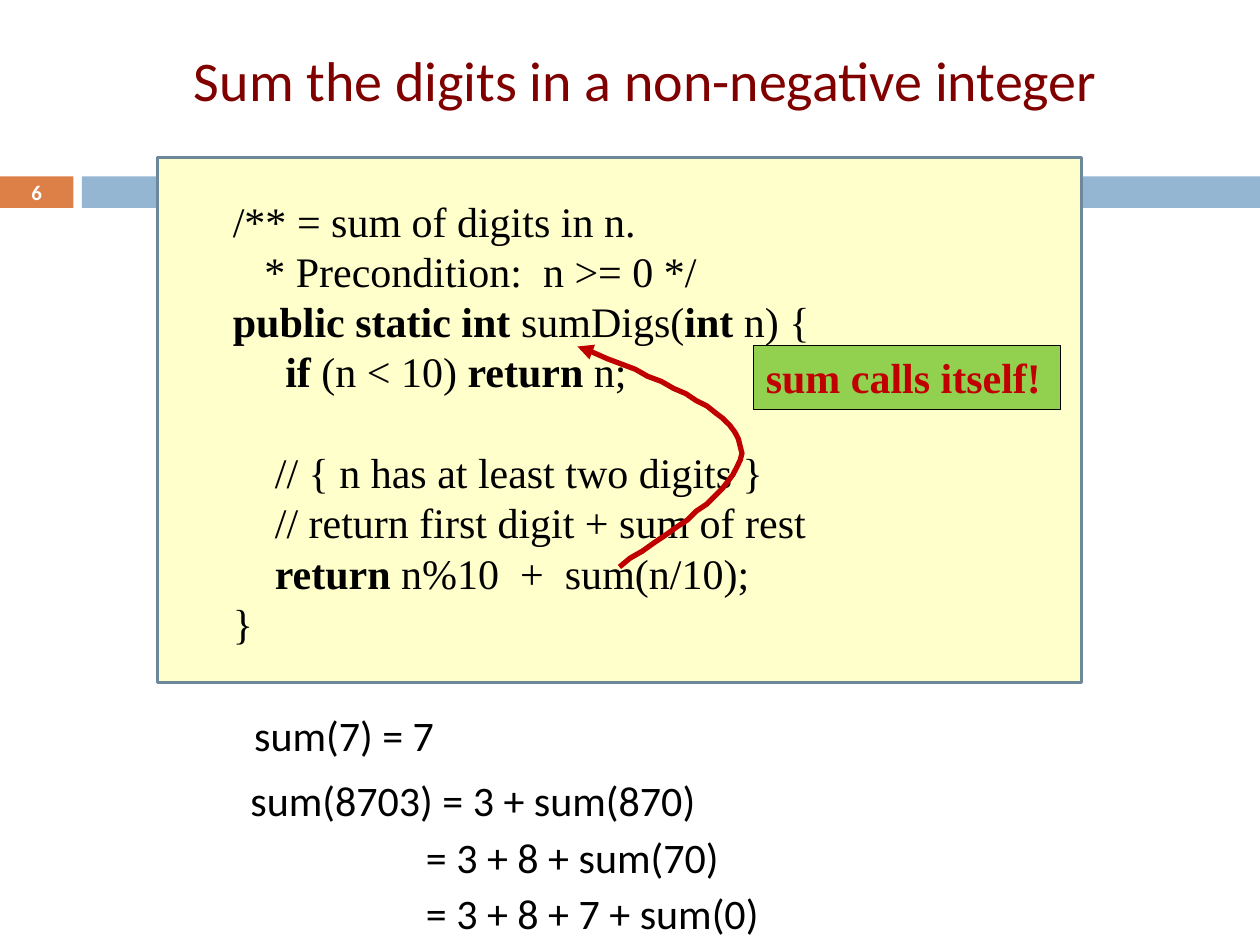
from lxml import etree
from pptx import Presentation
from pptx.dml.color import RGBColor
from pptx.enum.shapes import MSO_SHAPE
from pptx.enum.text import MSO_ANCHOR, MSO_AUTO_SIZE, PP_ALIGN
from pptx.oxml.ns import qn
from pptx.util import Pt

RECT = MSO_SHAPE.RECTANGLE
TOP, MIDDLE = MSO_ANCHOR.TOP, MSO_ANCHOR.MIDDLE
LEFT, CENTER = PP_ALIGN.LEFT, PP_ALIGN.CENTER
NO_FIT = MSO_AUTO_SIZE.NONE

COLORS = {
    "orange": "DD8047", "blue": "94B6D2", "cream": "FFFFCC", "slate": "6D879B",
    "maroon": "800000", "red": "C00000", "green": "92D050",
    "black": "000000", "white": "FFFFFF",
}
SANS, SERIF = "Calibri", "Times New Roman"
CODE_SPACE = 6      # width of one space in the 24 pt serif
CODE_LEADING = 28.75

# (indent in spaces, blank lines before, text); |bars| enclose bold words
CODE = [
    (3, 0, "/** = sum of digits in n."),
    (6, 0, "* Precondition:  n >= 0 */"),
    (3, 0, "|public static int |sumDigs(|int |n) {"),
    (8, 0, "|if| (n < 10) |return| n;"),
    (7, 1, "// { n has at least two digits }"),
    (7, 0, "// return first digit + sum of rest"),
    (7, 0, "|return| n%10  +  sum(n/10);"),
    (3, 0, "}"),
]
# (left, top, indent, text)
STEPS = [
    (64, 439, 72, "sum(8703) = 3 + sum(870)"),
    (64.8, 471.6, 171.5, "= 3 + 8 + sum(70)"),
    (64.8, 503.5, 171.5, "= 3 + 8 + 7 + sum(0)"),
]


def rgb(name):
    return RGBColor.from_string(COLORS[name])


def write(p, text, font=SANS, size=24, color="black", bold=False,
          align=LEFT, indent=0, before=0, leading=None):
    """Fill a paragraph; words between bars switch the bold setting."""
    p.alignment = align
    p.space_before = Pt(before)
    if leading:
        p.line_spacing = Pt(leading)
    pPr = p._p.get_or_add_pPr()
    pPr.set("marL", str(Pt(indent)))
    pPr.set("indent", "0")
    etree.SubElement(pPr, qn("a:buNone"))
    for i, part in enumerate(text.split("|")):
        if part:
            r = p.add_run()
            r.text = part
            r.font.name, r.font.size = font, Pt(size)
            r.font.bold = bold != (i % 2 == 1)
            r.font.color.rgb = rgb(color)


def bezier(start, c1, c2, end, steps=16):
    """Points on a cubic curve, without its start."""
    for i in range(1, steps + 1):
        t = i / steps
        u = 1 - t
        yield tuple(u**3 * a + 3 * u * u * t * b + 3 * u * t * t * c + t**3 * d
                    for a, b, c, d in zip(start, c1, c2, end))


class SlideBuilder:
    def __init__(self, prs):
        self.slide = prs.slides.add_slide(prs.slide_layouts[1])
        self.shapes = self.slide.shapes

    def frame(self, sp, anchor=TOP, wrap=True):
        tf = sp.text_frame
        tf.auto_size = NO_FIT
        tf.word_wrap = wrap
        tf.vertical_anchor = anchor
        return tf

    def placeholder(self, idx, x, y, w, h, text, anchor=TOP, **fmt):
        sp = self.slide.placeholders[idx]
        sp.left, sp.top, sp.width, sp.height = Pt(x), Pt(y), Pt(w), Pt(h)
        write(self.frame(sp, anchor).paragraphs[0], text, **fmt)

    def rect(self, x, y, w, h, fill, line=None, width=1.0):
        sp = self.shapes.add_shape(RECT, Pt(x), Pt(y), Pt(w), Pt(h))
        sp.shadow.inherit = False
        sp.fill.solid()
        sp.fill.fore_color.rgb = rgb(fill)
        if line:
            sp.line.color.rgb = rgb(line)
            sp.line.width = Pt(width)
        else:
            sp.line.fill.background()
        return sp

    def label(self, sp, text, anchor=TOP, inset=None, **fmt):
        tf = self.frame(sp, anchor, wrap=False)
        if inset is not None:
            tf.margin_left = tf.margin_right = Pt(inset)
            tf.margin_top = tf.margin_bottom = Pt(inset)
        write(tf.paragraphs[0], text, **fmt)

    def text(self, x, y, w, h, lines):
        """Text box with one paragraph per (text, format) pair."""
        tf = self.frame(self.shapes.add_textbox(Pt(x), Pt(y), Pt(w), Pt(h)))
        for i, (text, fmt) in enumerate(lines):
            p = tf.add_paragraph() if i else tf.paragraphs[0]
            write(p, text, **fmt)

    def curved_arrow(self, start, curves, color, width):
        """Chain of cubic curves with an arrowhead at its start."""
        points = [start]
        for c1, c2, end in curves:
            points.extend(bezier(points[-1], c1, c2, end))
        fb = self.shapes.build_freeform(*start, scale=Pt(1))
        fb.add_line_segments(points[1:], close=False)
        sp = fb.convert_to_shape()
        sp.shadow.inherit = False
        sp.fill.background()
        sp.line.color.rgb = rgb(color)
        sp.line.width = Pt(width)
        ln = sp.line._get_or_add_ln()
        etree.SubElement(ln, qn("a:headEnd"), type="triangle")


def main():
    prs = Presentation()
    prs.slide_width, prs.slide_height = Pt(720), Pt(540)
    s = SlideBuilder(prs)

    number = s.rect(0, 100.8, 42, 18, "orange")
    s.label(number, "6", anchor=MIDDLE, inset=0, size=11.9, color="white",
            bold=True, align=CENTER)
    s.rect(46.8, 100.8, 673.2, 18, "blue")
    s.rect(90, 90, 528, 300, "cream", line="slate", width=1.5)

    s.placeholder(0, 48, 18, 642, 54, "Sum the digits in a non-negative integer",
                  anchor=MIDDLE, size=32, color="maroon", align=CENTER)
    s.placeholder(1, 66, 402, 522, 42, "sum(7) = 7", indent=72)

    s.text(108, 108, 498, 269, [
        (text, dict(font=SERIF, indent=spaces * CODE_SPACE,
                    before=blanks * CODE_LEADING, leading=CODE_LEADING))
        for spaces, blanks, text in CODE])
    for x, y, indent, text in STEPS:
        s.text(x, y, 614, 42, [(text, dict(indent=indent))])

    s.curved_arrow((330, 198), [
        ((374.4, 216), (419, 233.3), (423.4, 254.9)),
        ((427, 275.8), (390.2, 299.5), (353.5, 324)),
    ], "red", 3)
    callout = s.rect(430.5, 197.5, 175.5, 36.5, "green", line="black", width=0.75)
    s.label(callout, "sum calls itself!", font=SERIF, color="red", bold=True,
            leading=CODE_LEADING)

    prs.save("out.pptx")


if __name__ == "__main__":
    main()
